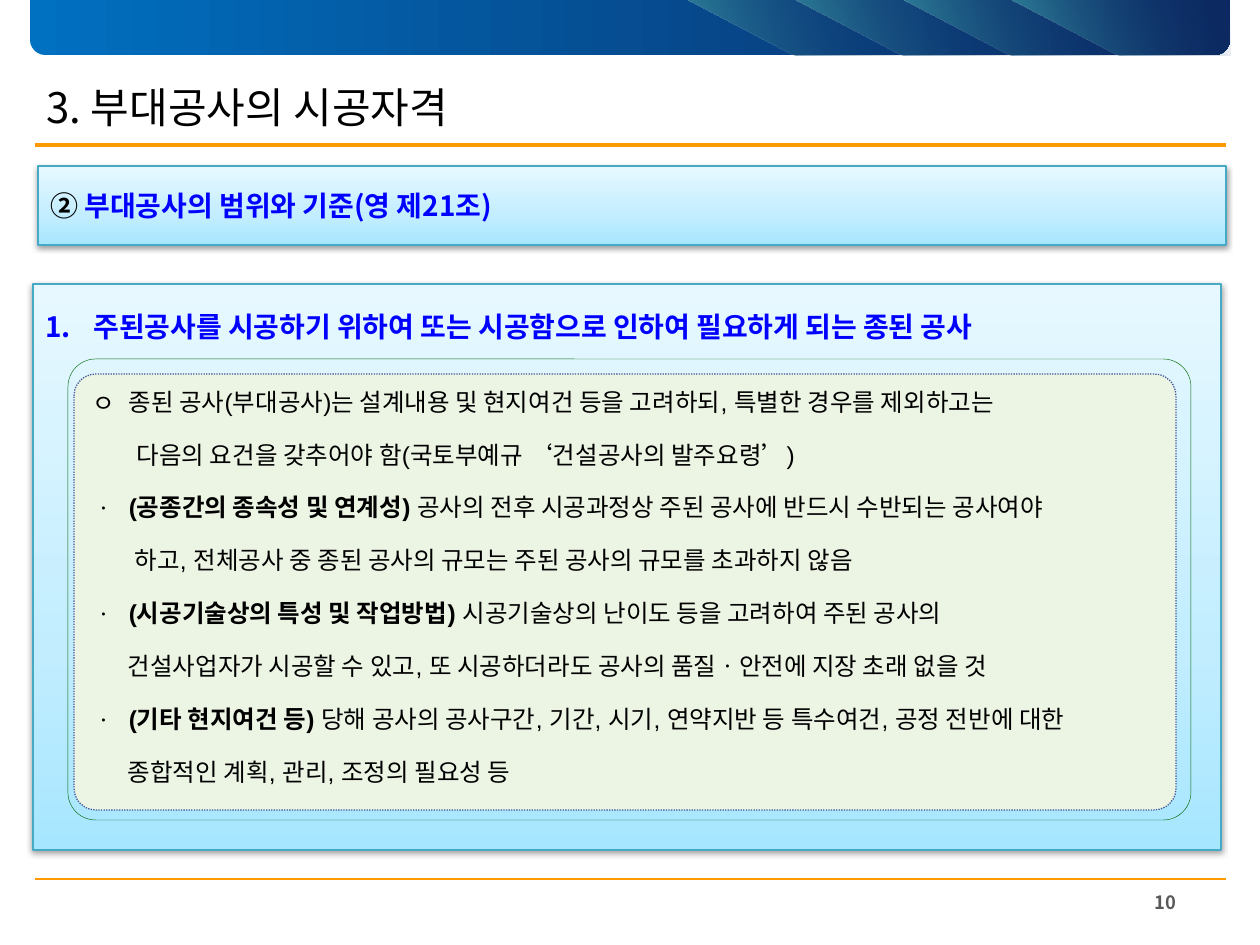
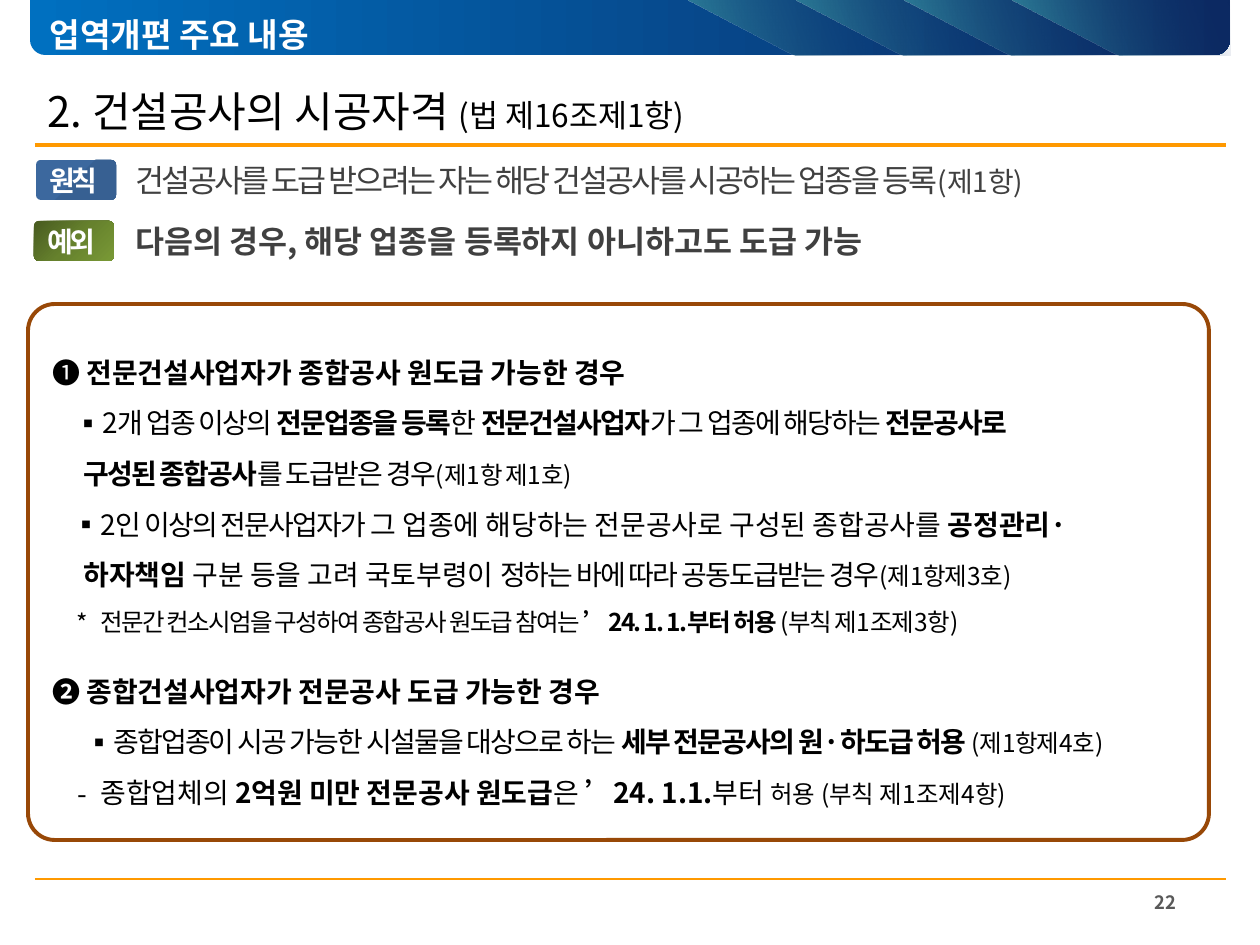
from dataclasses import dataclass

from lxml import etree
from pptx import Presentation
from pptx import util as u
from pptx.dml.color import RGBColor
from pptx.enum import dml, shapes, text
from pptx.oxml import ns

PX_PER_INCH = 126
KOREAN = "Noto Sans CJK KR"
BLACK, WHITE, GREY, DARK = "000000", "FFFFFF", "595959", "404040"
BLUE, ORANGE, BROWN, TEAL = "0000FF", "FF9900", "984807", "46AAC5"
BAND = [(0, "0070C0"), (100, "0C2962")]
STRIPE = [(0, "31859C"), (100, "0C2962", 0)]
SKY = [(0, "A7E6FF"), (35, "C1EDFF"), (100, "E7F8FF")]
BLUE_BADGE = [(49, "3C689E"), (50, "376092")]
GREEN_BADGE = [(0, "485B20"), (50, "66812D"), (100, "799936")]


@dataclass
class Run:
    text: str
    bold: bool = False
    spacing: float = 0
    size: float = None
    color: str = None


# ---------- basic helpers ----------
def px(length):
    return u.Emu(round(length * 914400 / PX_PER_INCH))


def rgb(value):
    return RGBColor.from_string(value)


def add_xml(parent, tag, **attributes):
    element = etree.SubElement(parent, ns.qn("a:" + tag))
    for name, value in attributes.items():
        element.set(name, str(value))
    return element


def gradient_fill(shape, stops, angle):
    shape.fill.gradient()
    gradient = shape.element.spPr.find(ns.qn("a:gradFill"))
    for child in list(gradient):
        gradient.remove(child)
    stop_list = add_xml(gradient, "gsLst")
    for position, color, *alpha in stops:
        stop = add_xml(stop_list, "gs", pos=position * 1000)
        stop_color = add_xml(stop, "srgbClr", val=color)
        if alpha:
            add_xml(stop_color, "alpha", val=alpha[0] * 1000)
    add_xml(gradient, "lin", ang=angle * 60000, scaled=0)


def style_shape(shape, fill=None, angle=0, line=None, width=0.75):
    shape.shadow.inherit = False
    if isinstance(fill, list):
        gradient_fill(shape, fill, angle)
    elif fill:
        shape.fill.solid()
        shape.fill.fore_color.rgb = rgb(fill)
    else:
        shape.fill.background()
    if line:
        shape.line.color.rgb = rgb(line)
        shape.line.width = u.Pt(width)
    else:
        shape.line.fill.background()


def add_box(slide, kind, box, radius=None, **style):
    shape = slide.shapes.add_shape(kind, *map(px, box))
    if radius is not None:
        shape.adjustments[0] = radius
    style_shape(shape, **style)
    return shape


def add_rounded(slide, box, radius, **style):
    return add_box(slide, shapes.MSO_SHAPE.ROUNDED_RECTANGLE, box, radius, **style)


def add_rule(slide, y, width):
    rule = slide.shapes.add_connector(
        shapes.MSO_CONNECTOR.STRAIGHT, px(35), px(y), px(1226), px(y))
    rule.line.color.rgb = rgb(ORANGE)
    rule.line.width = u.Pt(width)
    add_xml(rule.element.spPr, "effectLst")


# ---------- text ----------
def write_paragraph(paragraph, runs, size, color=BLACK, face=KOREAN, bullet=None,
                    number=False, left=0, hang=0, height=None, before=0,
                    align=text.PP_ALIGN.LEFT):
    properties = paragraph._p.get_or_add_pPr()
    properties.set("marL", str(px(left)))
    properties.set("indent", str(px(-hang)))
    if number:
        add_xml(properties, "buFont", typeface=KOREAN)
        add_xml(properties, "buAutoNum", type="arabicPeriod")
    elif bullet:
        add_xml(properties, "buFont", typeface=KOREAN)
        add_xml(properties, "buChar", char=bullet)
    else:
        add_xml(properties, "buNone")
    paragraph.alignment = align
    paragraph.space_before = u.Pt(before)
    if height:
        paragraph.line_spacing = u.Pt(height)
    for part in runs:
        run = paragraph.add_run()
        run.text = part.text
        run.font.name = face
        run.font.size = u.Pt(part.size or size)
        run.font.bold = part.bold
        run.font.color.rgb = rgb(part.color or color)
        run_properties = run.font._element
        add_xml(run_properties, "ea", typeface=KOREAN)
        if part.spacing:
            run_properties.set("spc", str(round(part.spacing * 100)))


def prepare_frame(shape, anchor=text.MSO_ANCHOR.MIDDLE):
    frame = shape.text_frame
    frame.word_wrap = True
    frame.auto_size = text.MSO_AUTO_SIZE.NONE
    frame.vertical_anchor = anchor
    return frame


def write_line(shape, runs, size, **style):
    write_paragraph(prepare_frame(shape).paragraphs[0], runs, size, **style)


def write_lines(frame, lines, **shared):
    for index, (runs, style) in enumerate(lines):
        paragraph = frame.add_paragraph() if index else frame.paragraphs[0]
        write_paragraph(paragraph, runs, **{**shared, **style})


def add_text(slide, box, runs, size, **style):
    write_line(slide.shapes.add_textbox(*map(px, box)), runs, size, **style)


def fill_placeholder(placeholder, box, runs, size, **style):
    placeholder.left, placeholder.top, placeholder.width, placeholder.height = map(px, box)
    write_line(placeholder, runs, size, **style)
    placeholder.element.getparent().append(placeholder.element)


# ---------- shared frame: band, rules, page number ----------
def add_frame(slide, page):
    band = add_box(slide, shapes.MSO_SHAPE.ROUND_2_SAME_RECTANGLE, (30, 0, 1200, 55),
                   radius=0, fill=BAND)
    band.adjustments[1] = 0.28
    for index in range(4):
        left = 687 + 108 * index
        builder = slide.shapes.build_freeform(px(left), 0, scale=1.0)
        builder.add_line_segments([(px(left + 219), 0), (px(left + 219), px(55)),
                                   (px(left + 108), px(55))], close=True)
        style_shape(builder.convert_to_shape(), fill=STRIPE, angle=340)
    add_rule(slide, 145, 2)
    add_rule(slide, 879, 0.75)
    add_text(slide, (1086, 884, 159, 36), [Run(page, True)], 10.5, color=GREY,
             align=text.PP_ALIGN.CENTER)


# ---------- slide 1: scope of incidental works ----------
def add_sky_panel(slide, box):
    panel = add_box(slide, shapes.MSO_SHAPE.RECTANGLE, box, fill=SKY, angle=270, line=TEAL)
    effects = panel.element.spPr.find(ns.qn("a:effectLst"))
    shadow = add_xml(effects, "outerShdw", blurRad=u.Pt(3.1), dist=u.Pt(1.6),
                     dir=90 * 60000, rotWithShape=0)
    add_xml(add_xml(shadow, "srgbClr", val=BLACK), "alpha", val=38000)
    return panel


def add_requirements(slide, box):
    left, top, width, height = box
    add_rounded(slide, box, 0.06, line="006600", width=0.25)
    card = add_rounded(slide, (left + 6, top + 15, width - 21, height - 25), 0.05,
                       fill="ECF4E4", line="415599")
    card.line.dash_style = dml.MSO_LINE.ROUND_DOT
    frame = prepare_frame(card, text.MSO_ANCHOR.TOP)
    frame.margin_top = frame.margin_bottom = px(6)
    circle = dict(bullet="ㅇ", left=36, hang=36)
    dot = dict(bullet="ㆍ", left=36, hang=36)
    write_lines(frame, [
        ([Run("종된 공사(부대공사)는 설계내용 및 현지여건 등을 고려하되, 특별한 경우를 제외하고는")],
         dict(circle, height=17)),
        ([Run("다음의 요건을 갖추어야 함(국토부예규 ‘건설공사의 발주요령’)")], dict(left=44)),
        ([Run("(공종간의 종속성 및 연계성) ", True),
          Run("공사의 전후 시공과정상 주된 공사에 반드시 수반되는 공사여야")], dot),
        ([Run("하고, 전체공사 중 종된 공사의 규모는 주된 공사의 규모를 초과하지 않음")],
         dict(left=42)),
        ([Run("(시공기술상의 특성 및 작업방법) ", True),
          Run("시공기술상의 난이도 등을 고려하여 주된 공사의")], dot),
        ([Run("건설사업자가 시공할 수 있고, 또 시공하더라도 공사의 품질ㆍ안전에 지장 초래 없을 것")],
         dict(left=35)),
        ([Run("(기타 현지여건 등) ", True),
          Run("당해 공사의 공사구간, 기간, 시기, 연약지반 등 특수여건, 공정 전반에 대한")], dot),
        ([Run("종합적인 계획, 관리, 조정의 필요성 등")], dict(left=35)),
    ], size=14, face="Arial", height=30.2)


def build_scope_slide(presentation):
    slide = presentation.slides.add_slide(presentation.slide_layouts[5])
    add_frame(slide, "10")
    fill_placeholder(slide.shapes.title, (34, 68, 1004, 77),
                     [Run("3. 부대공사의 시공자격")], 24)
    write_line(add_sky_panel(slide, (38, 166, 1188, 79)),
               [Run("② ", True, color=BLACK), Run("부대공사의 범위와 기준(영 제21조)", True)],
               16, color=BLUE)
    add_sky_panel(slide, (33, 284, 1188, 566))
    add_text(slide, (33, 295, 1188, 63),
             [Run("주된공사를 시공하기 위하여 또는 시공함으로 인하여 필요하게 되는 종된 공사", True)],
             16, color=BLUE, number=True, left=48, hang=48)
    add_requirements(slide, (68, 359, 1123, 461))


# ---------- slide 2: who may carry out works ----------
def add_rule_row(slide, box, label, fill, runs):
    left, top, width, height = box
    badge = add_rounded(slide, (left, top, 80, height), 0.12, fill=fill, angle=45)
    write_line(badge, [Run(label, True, -2)], 16, color=WHITE)
    badge.text_frame.word_wrap = False
    add_text(slide, (123, top - 5, width, height + 10), runs, 18, color=DARK)


def add_exceptions(slide, box):
    left, top, width, height = box
    add_rounded(slide, box, 0.05, line=BROWN, width=2.25)
    text_box = slide.shapes.add_textbox(
        *map(px, (left + 12, top + 28, width - 14, height - 40)))
    frame = prepare_frame(text_box, text.MSO_ANCHOR.TOP)

    def item(mark, indent, hang=24):
        return dict(bullet=mark, left=indent + hang, hang=hang)

    write_lines(frame, [
        ([Run("❶ "), Run("전문건설사업자가 종합공사 원도급 가능한 경우", True)], {}),
        ([Run("2개 업종 이상의 ", spacing=-1), Run("전문업종을 등록", True, -1),
          Run("한 ", spacing=-1), Run("전문건설사업자", True, -1),
          Run("가 그 업종에 해당하는 ", spacing=-1), Run("전문공사로", True, -1)],
         item("▪", 22)),
        ([Run("구성된 종합공사", True, -1), Run("를 도급받은 경우", spacing=-1),
          Run("(제1항 제1호)", spacing=-1, size=14)], dict(left=31)),
        ([Run("2인 이상의 전문사업자가 ", spacing=-1),
          Run("그 업종에 해당하는 전문공사로 구성된 종합공사를 "), Run("공정관리·", True)],
         item("▪", 20)),
        ([Run("하자책임", True), Run(" 구분 등을 고려 국토부령이 "),
          Run("정하는 바에 따라 공동도급받는 경우", spacing=-1),
          Run("(제1항제3호)", spacing=-1, size=14)], dict(left=31)),
        ([Run("전문간 컨소시엄을 구성하여 종합공사 원도급 참여는 ", spacing=-1),
          Run("’24. 1. 1.부터 허용 ", True, -1), Run("(부칙 제1조제3항", spacing=-1), Run(")")],
         dict(item("*", 24), size=14, height=25.7)),
        ([Run("❷ 종합건설사업자가 전문공사 도급 가능한 경우", True)], dict(before=12)),
        ([Run("종합업종이 시공 가능한 시설물을 대상으로 하는 ", spacing=-1),
          Run("세부 전문공사의 원·하도급 허용 ", True, -1),
          Run("(제1항제4호)", spacing=-1, size=14)], item("▪", 33, 26)),
        ([Run("종합업체의 "), Run("2억원 미만 전문공사 원도급", True), Run("은"),
          Run(" ’24. 1.1.", True), Run("부터 "), Run("허용 (부칙 제1조제4항)", size=14)],
         item("-", 25, 23)),
    ], size=16, height=28.9)


def build_qualification_slide(presentation):
    slide = presentation.slides.add_slide(presentation.slide_layouts[1])
    add_frame(slide, "22")
    fill_placeholder(slide.shapes.title, (35, 89, 915, 44),
                     [Run("2. 건설공사의 시공자격 "), Run("(법 제16조제1항)", size=18)], 24)
    fill_placeholder(slide.placeholders[1], (37, 15, 806, 39),
                     [Run("업역개편 주요 내용", True)], 19, color=WHITE)
    add_rule_row(slide, (36, 160, 1110, 40), "원칙", BLUE_BADGE,
                 [Run("건설공사를 도급 받으려는 자는 해당 건설공사를 시공하는 업종을 등록", spacing=-1.5),
                  Run("(제1항)", spacing=-1.5, size=16)])
    add_rule_row(slide, (34, 221, 1110, 40), "예외", GREEN_BADGE,
                 [Run("다음의 경우, 해당 업종을 등록하지 아니하고도 도급 가능", True)])
    add_exceptions(slide, (28, 304, 1181, 536))


def main():
    presentation = Presentation()
    presentation.slide_width, presentation.slide_height = px(1260), px(945)
    build_scope_slide(presentation)
    build_qualification_slide(presentation)
    presentation.save("out.pptx")


if __name__ == "__main__":
    main()
